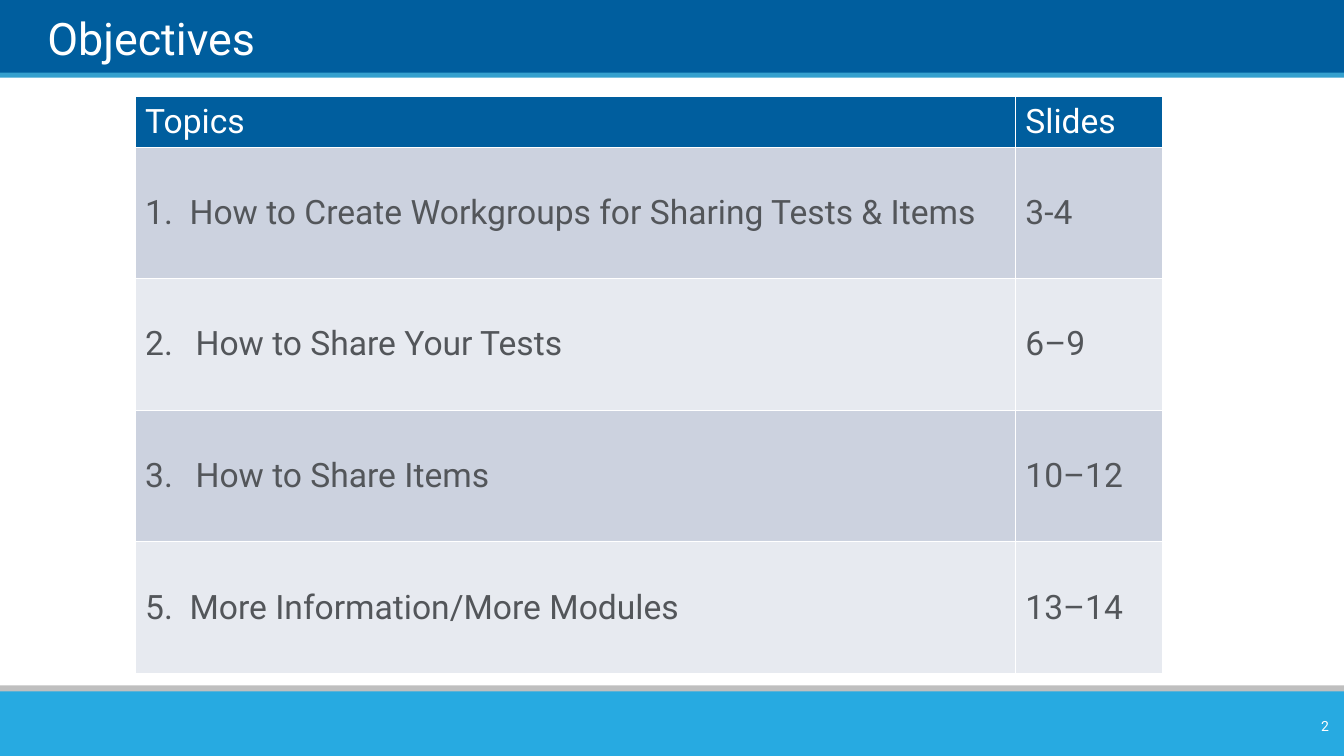
"""Build the Objectives slide with its table of topics."""
from lxml import etree
from pptx import Presentation
from pptx.dml.color import RGBColor
from pptx.enum.shapes import MSO_SHAPE
from pptx.enum.text import MSO_ANCHOR, PP_ALIGN
from pptx.oxml.ns import qn
from pptx.util import Inches, Pt

RECTANGLE = MSO_SHAPE.RECTANGLE
MIDDLE, BOTTOM = MSO_ANCHOR.MIDDLE, MSO_ANCHOR.BOTTOM
LEFT, RIGHT = PP_ALIGN.LEFT, PP_ALIGN.RIGHT
WHITE = RGBColor(0xFF, 0xFF, 0xFF)
NAVY = RGBColor(0x00, 0x5E, 0x9E)
BLUE = RGBColor(0x35, 0xA0, 0xCE)
SKY = RGBColor(0x27, 0xAA, 0xE1)
SILVER = RGBColor(0xBF, 0xBF, 0xBF)
SLATE = RGBColor(0x53, 0x56, 0x5A)
BANDS = [RGBColor(0xCC, 0xD2, 0xDF), RGBColor(0xE7, 0xEA, 0xF0)]
FONT = "Roboto"
SLIDE_WIDTH, SLIDE_HEIGHT = 13.33, 7.5
HEADINGS = ("Topics", "Slides")
TOPICS = [
    (1, 0.44, "How to Create Workgroups for Sharing Tests & Items", "3-4"),
    (2, 0.5, "How to Share Your Tests", "6–9"),
    (3, 0.5, "How to Share Items", "10–12"),
    (5, 0.44, "More Information/More Modules", "13–14"),
]


def style_text(paragraph, size, color):
    """Set the typeface, size and colour of a paragraph's runs."""
    for run in paragraph.runs:
        run.font.name = FONT
        run.font.size = Pt(size)
        run.font.color.rgb = color


def add_band(slide, top, height, color):
    """Draw a full-width coloured band."""
    band = slide.shapes.add_shape(
        RECTANGLE, 0, Inches(top), Inches(SLIDE_WIDTH), Inches(height))
    band.shadow.inherit = False
    band.fill.solid()
    band.fill.fore_color.rgb = color
    band.line.fill.background()


def add_label(slide, box, text, size, anchor, align, inset):
    """Write one white line of text in the given box."""
    label = slide.shapes.add_textbox(*map(Inches, box))
    frame = label.text_frame
    frame.word_wrap = True
    frame.vertical_anchor = anchor
    frame.margin_left = frame.margin_right = Inches(inset)
    frame.margin_top = frame.margin_bottom = Inches(inset / 2)
    frame.text = text
    frame.paragraphs[0].alignment = align
    style_text(frame.paragraphs[0], size, WHITE)


def add_header(slide, top, height):
    """Place the title band, its accent rule and the title."""
    add_band(slide, top, height, NAVY)
    add_band(slide, top + height - 0.02, 0.05, BLUE)
    add_label(slide, (0.47, top + 0.08, 12.43, 0.57), "Objectives", 32,
              BOTTOM, LEFT, 0)


def add_footer(slide, top, height):
    """Place the footer bands and the slide number."""
    add_band(slide, top, 0.14, SILVER)
    add_band(slide, top + 0.06, height - 0.06, SKY)
    add_label(slide, (12.51, top + 0.25, 0.77, 0.3), "2", 10,
              MIDDLE, RIGHT, 0.1)


def add_borders(cell):
    """Give a cell thin white borders on all sides."""
    properties = cell._tc.get_or_add_tcPr()
    for position, side in enumerate(("lnL", "lnR", "lnT", "lnB")):
        border = etree.Element(qn(f"a:{side}"), w=str(Pt(1)))
        fill = etree.SubElement(border, qn("a:solidFill"))
        etree.SubElement(fill, qn("a:srgbClr"), val=str(WHITE))
        properties.insert(position, border)


def fill_cell(cell, text, fill, color):
    """Write and colour one table cell."""
    cell.text = text
    cell.vertical_anchor = MIDDLE
    cell.fill.solid()
    cell.fill.fore_color.rgb = fill
    add_borders(cell)
    style_text(cell.text_frame.paragraphs[0], 24, color)


def number_topic(paragraph, number, indent):
    """Number a topic with a hanging indent."""
    properties = paragraph._p.get_or_add_pPr()
    properties.set("marL", str(Inches(indent)))
    properties.set("indent", str(-Inches(indent)))
    etree.SubElement(properties, qn("a:buFont"), typeface=FONT)
    etree.SubElement(properties, qn("a:buAutoNum"),
                     type="arabicPeriod", startAt=str(number))


def add_topics(slide, left, top, width, height):
    """Place the table of topics and slide ranges in its box."""
    heading_height, range_width = 0.48, 1.46
    table = slide.shapes.add_table(
        len(TOPICS) + 1, len(HEADINGS),
        *map(Inches, (left, top, width, height))).table
    table.columns[0].width = Inches(width - range_width)
    table.columns[1].width = Inches(range_width)
    table.rows[0].height = Inches(heading_height)
    for column, heading in enumerate(HEADINGS):
        fill_cell(table.cell(0, column), heading, NAVY, WHITE)
    for row, (number, indent, topic, slides) in enumerate(TOPICS, 1):
        table.rows[row].height = Inches((height - heading_height) / len(TOPICS))
        band = BANDS[(row - 1) % len(BANDS)]
        topic_cell = table.cell(row, 0)
        fill_cell(topic_cell, topic, band, SLATE)
        number_topic(topic_cell.text_frame.paragraphs[0], number, indent)
        fill_cell(table.cell(row, 1), slides, band, SLATE)


def main():
    """Build and save the slide."""
    deck = Presentation()
    deck.slide_width = Inches(SLIDE_WIDTH)
    deck.slide_height = Inches(SLIDE_HEIGHT)
    slide = deck.slides.add_slide(deck.slide_layouts[6])
    add_header(slide, -0.01, 0.75)
    add_footer(slide, 6.8, 0.7)
    add_topics(slide, 1.34, 0.96, 10.19, 5.7)
    deck.save("out.pptx")


if __name__ == "__main__":
    main()
